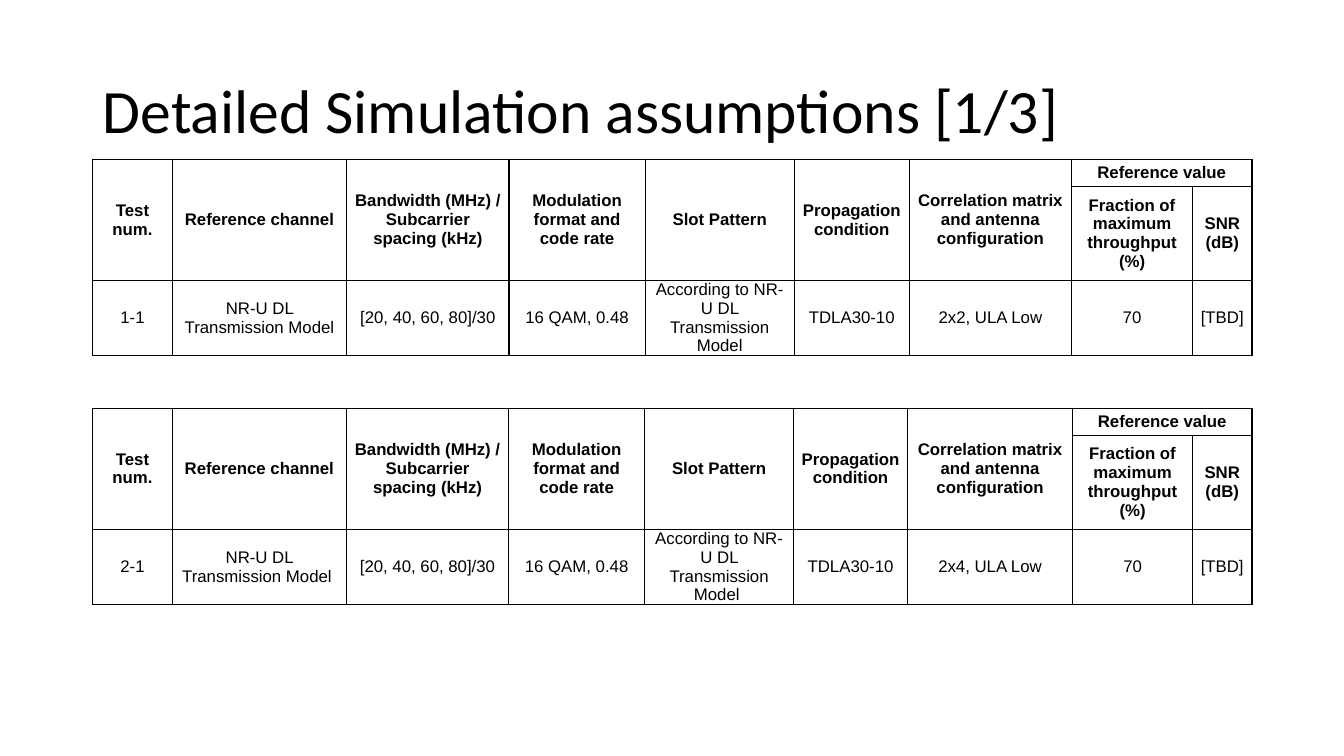
from dataclasses import dataclass

from lxml import etree
from pptx import Presentation
from pptx import util as u
from pptx.dml.color import RGBColor
from pptx.enum import text
from pptx.oxml import ns

HUES = {"ink": "000000", "paper": "FFFFFF"}
WIDE, HIGH = u.Inches(13.33), u.Inches(7.5)
LEFT, SPAN = 6.9, 86.27  # percent of slide width
ROWS = (3.6, 12.4, 8.93)  # percent of slide height
HEADS = (
    "Test num.",
    "Reference channel",
    "Bandwidth (MHz) / Subcarrier spacing (kHz)",
    "Modulation format and code rate",
    "Slot Pattern",
    "Propagation condition",
    "Correlation matrix and antenna configuration",
    "Reference value",
)
SUBS = ("Fraction of maximum throughput (%)", "SNR (dB)")
MODEL = "NR-U DL Transmission Model"


@dataclass
class Test:
    top: float  # percent of slide height
    cols: tuple[int, ...]  # relative column widths
    vals: tuple[str, ...]


TESTS = (
    Test(21.07, (79, 173, 161, 135, 148, 114, 161, 120, 59),
         ("1-1", MODEL, "[20, 40, 60, 80]/30", "16 QAM, 0.48",
          f"According to {MODEL}", "TDLA30-10", "2x2, ULA Low", "70", "[TBD]")),
    Test(54, (79, 173, 161, 135, 148, 113, 164, 119, 59),
         ("2-1", f"{MODEL} ", "[20, 40, 60, 80]/30", "16 QAM, 0.48",
          f"According to {MODEL} ", "TDLA30-10", "2x4, ULA Low", "70", "[TBD]")),
)


def across(pct: float) -> int:
    return round(WIDE * pct / 100)


def down(pct: float) -> int:
    return round(HIGH * pct / 100)


def write(frame, words: str, *, size: float = 12, font: str = "Arial",
          bold: bool = False, align=text.PP_ALIGN.CENTER, lead: float = 1) -> None:
    par = frame.paragraphs[0]
    par.alignment, par.line_spacing = align, lead
    run = par.add_run()
    run.text = words
    run.font.size, run.font.name, run.font.bold = u.Pt(size), font, bold
    run.font.color.rgb = RGBColor.from_string(HUES["ink"])


def dress(cell) -> None:
    """Give a cell its borders, fill, insets and anchor."""
    props = cell._tc.get_or_add_tcPr()
    for side in ("lnL", "lnR", "lnT", "lnB"):
        line = etree.SubElement(props, ns.qn(f"a:{side}"), w=str(u.Pt(1)))
        fill = etree.SubElement(line, ns.qn("a:solidFill"))
        etree.SubElement(fill, ns.qn("a:srgbClr"), val=HUES["ink"])
    cell.fill.solid()
    cell.fill.fore_color.rgb = RGBColor.from_string(HUES["paper"])
    cell.margin_left = cell.margin_right = u.Inches(0.07)
    cell.margin_top = cell.margin_bottom = 0
    cell.vertical_anchor = text.MSO_ANCHOR.MIDDLE


def draw(slide, test: Test) -> None:
    grid = slide.shapes.add_table(
        len(ROWS), len(test.cols), across(LEFT), down(test.top),
        across(SPAN), down(sum(ROWS))).table
    grid.first_row = grid.horz_banding = False
    for col, part in zip(grid.columns, test.cols):
        col.width = across(SPAN * part / sum(test.cols))
    for row, part in zip(grid.rows, ROWS):
        row.height = down(part)
    for cell in grid.iter_cells():
        dress(cell)

    # Headings: all but the last span two rows, the last spans two columns
    last = len(HEADS) - 1
    for col, head in enumerate(HEADS):
        cell = grid.cell(0, col)
        cell.merge(grid.cell(0, col + 1) if col == last else grid.cell(1, col))
        write(cell.text_frame, head, bold=True)
    for col, head in enumerate(SUBS, last):
        write(grid.cell(1, col).text_frame, head, bold=True)

    # Values
    for col, val in enumerate(test.vals):
        write(grid.cell(2, col).text_frame, val)


def main() -> None:
    deck = Presentation()
    deck.slide_width, deck.slide_height = WIDE, HIGH
    slide = deck.slides.add_slide(deck.slide_layouts[5])

    # Title
    title = slide.shapes.title
    title.left, title.top = across(LEFT), down(5.33)
    title.width, title.height = across(93.17), down(19.33)
    title.text_frame.vertical_anchor = text.MSO_ANCHOR.MIDDLE
    write(title.text_frame, "Detailed Simulation assumptions [1/3]", size=44,
          font="Calibri", align=text.PP_ALIGN.LEFT, lead=0.9)

    # Test tables
    for test in TESTS:
        draw(slide, test)
    deck.save("out.pptx")


if __name__ == "__main__":
    main()
